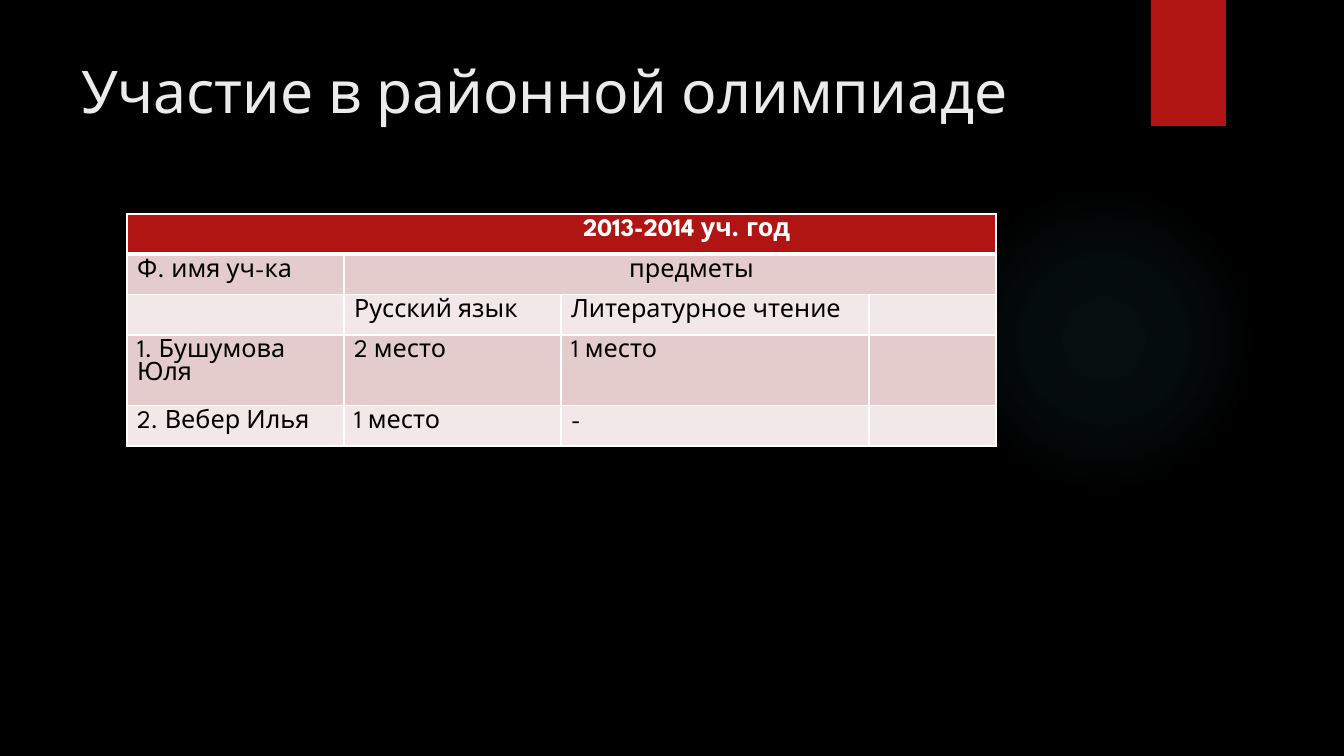
from dataclasses import dataclass

from lxml.etree import SubElement
from pptx import Presentation
from pptx.dml.color import RGBColor
from pptx.enum.shapes import MSO_SHAPE
from pptx.enum.text import MSO_ANCHOR
from pptx.oxml import parse_xml
from pptx.oxml.ns import qn
from pptx.util import Emu, Pt

EMU_PER_INCH = 914400
PX_PER_INCH = 100.8


@dataclass(frozen=True)
class Theme:
    font: str = "League Spartan"
    background: str = "000000"
    accent: str = "B01513"
    glow: str = "50B9C1"
    title: str = "EBEBEB"
    header_text: str = "FFFFFF"
    body_text: str = "000000"
    border: str = "FFFFFF"
    bands: tuple[str, str] = ("E4CCCC", "F2E8E7")
    title_size: int = 42
    table_size: int = 18
    border_width: int = 1
    header_border_width: int = 3


@dataclass(frozen=True)
class Box:
    left: int
    top: int
    width: int
    height: int


@dataclass(frozen=True)
class Entry:
    row: int
    column: int
    text: str
    span: int = 1
    indent: int = 0


THEME = Theme()
TITLE_BOX = Box(72, 50, 1037, 154)
GLOW_BOX = Box(949, 184, 310, 310)
RIBBON_BOX = Box(1151, 0, 75, 126)
COLUMNS = (217, 217, 308, 127)
ROWS = (40, 40, 40, 40, 40)
TABLE_BOX = Box(127, 214, sum(COLUMNS), sum(ROWS))
GLOW_STOPS = ((0, 7), (36, 6), (69, 0))
ENTRIES = (
    Entry(0, 0, "2013-2014 уч. год", 4, 446),
    Entry(1, 0, "Ф. имя уч-ка"),
    Entry(1, 1, "предметы", 3, 275),
    Entry(2, 1, "Русский язык"),
    Entry(2, 2, "Литературное чтение"),
    Entry(3, 0, "1. Бушумова Юля"),
    Entry(3, 1, "2 место"),
    Entry(3, 2, "1 место"),
    Entry(4, 0, "2. Вебер Илья"),
    Entry(4, 1, "1 место"),
    Entry(4, 2, "-"),
)


def px(length: int) -> Emu:
    return Emu(round(length * EMU_PER_INCH / PX_PER_INCH))


def place(box: Box) -> tuple[Emu, Emu, Emu, Emu]:
    return px(box.left), px(box.top), px(box.width), px(box.height)


def rgb(color: str) -> RGBColor:
    return RGBColor.from_string(color)


def style_text(paragraph, size: int, color: str, bold: bool = False) -> None:
    for run in paragraph.runs:
        run.font.name = THEME.font
        run.font.size = Pt(size)
        run.font.bold = bold
        run.font.color.rgb = rgb(color)


def add_plain_shape(slide, kind: MSO_SHAPE, box: Box):
    shape = slide.shapes.add_shape(kind, *place(box))
    shape.shadow.inherit = False
    shape.line.fill.background()
    return shape


def add_glow(slide) -> None:
    glow = add_plain_shape(slide, MSO_SHAPE.OVAL, GLOW_BOX)
    stops = "".join(
        f'<a:gs pos="{position * 1000}"><a:srgbClr val="{THEME.glow}">'
        f'<a:alpha val="{opacity * 1000}"/></a:srgbClr></a:gs>'
        for position, opacity in GLOW_STOPS
    )
    gradient = parse_xml(
        '<a:gradFill xmlns:a="http://schemas.openxmlformats.org/drawingml/2006/main">'
        f'<a:gsLst>{stops}</a:gsLst><a:path path="circle">'
        '<a:fillToRect l="50000" t="50000" r="50000" b="50000"/></a:path></a:gradFill>'
    )
    glow.element.spPr.find(qn("a:prstGeom")).addnext(gradient)


def add_ribbon(slide) -> None:
    ribbon = add_plain_shape(slide, MSO_SHAPE.RECTANGLE, RIBBON_BOX)
    ribbon.fill.solid()
    ribbon.fill.fore_color.rgb = rgb(THEME.accent)


def add_title(slide) -> None:
    frame = slide.shapes.add_textbox(*place(TITLE_BOX)).text_frame
    frame.word_wrap = True
    frame.vertical_anchor = MSO_ANCHOR.TOP
    frame.text = "Участие в районной олимпиаде"
    style_text(frame.paragraphs[0], THEME.title_size, THEME.title)


def add_borders(cell, row: int) -> None:
    properties = cell._tc.get_or_add_tcPr()
    for side in "LRTB":
        under_header = (row, side) in ((0, "B"), (1, "T"))
        width = THEME.header_border_width if under_header else THEME.border_width
        line = SubElement(properties, qn(f"a:ln{side}"), w=str(Pt(width)))
        fill = SubElement(line, qn("a:solidFill"))
        SubElement(fill, qn("a:srgbClr"), val=THEME.border)


def add_results(slide) -> None:
    results = slide.shapes.add_table(len(ROWS), len(COLUMNS), *place(TABLE_BOX)).table
    results.first_row = False
    results.horz_banding = False
    for column, width in zip(results.columns, COLUMNS):
        column.width = px(width)
    for row, height in enumerate(ROWS):
        results.rows[row].height = px(height)
        for cell in results.rows[row].cells:
            add_borders(cell, row)
            cell.fill.solid()
            cell.fill.fore_color.rgb = rgb(THEME.bands[(row - 1) % 2] if row else THEME.accent)
    for entry in ENTRIES:
        cell = results.cell(entry.row, entry.column)
        if entry.span > 1:
            cell.merge(results.cell(entry.row, entry.column + entry.span - 1))
        cell.text_frame.text = entry.text
        paragraph = cell.text_frame.paragraphs[0]
        if entry.indent:
            paragraph._p.get_or_add_pPr().set("marL", str(px(entry.indent)))
        header = entry.row == 0
        color = THEME.header_text if header else THEME.body_text
        style_text(paragraph, THEME.table_size, color, header)


def main() -> None:
    presentation = Presentation()
    presentation.slide_width = px(1344)
    presentation.slide_height = px(756)
    slide = presentation.slides.add_slide(presentation.slide_layouts[6])
    slide.background.fill.solid()
    slide.background.fill.fore_color.rgb = rgb(THEME.background)
    add_glow(slide)
    add_ribbon(slide)
    add_title(slide)
    add_results(slide)
    presentation.save("out.pptx")


if __name__ == "__main__":
    main()
